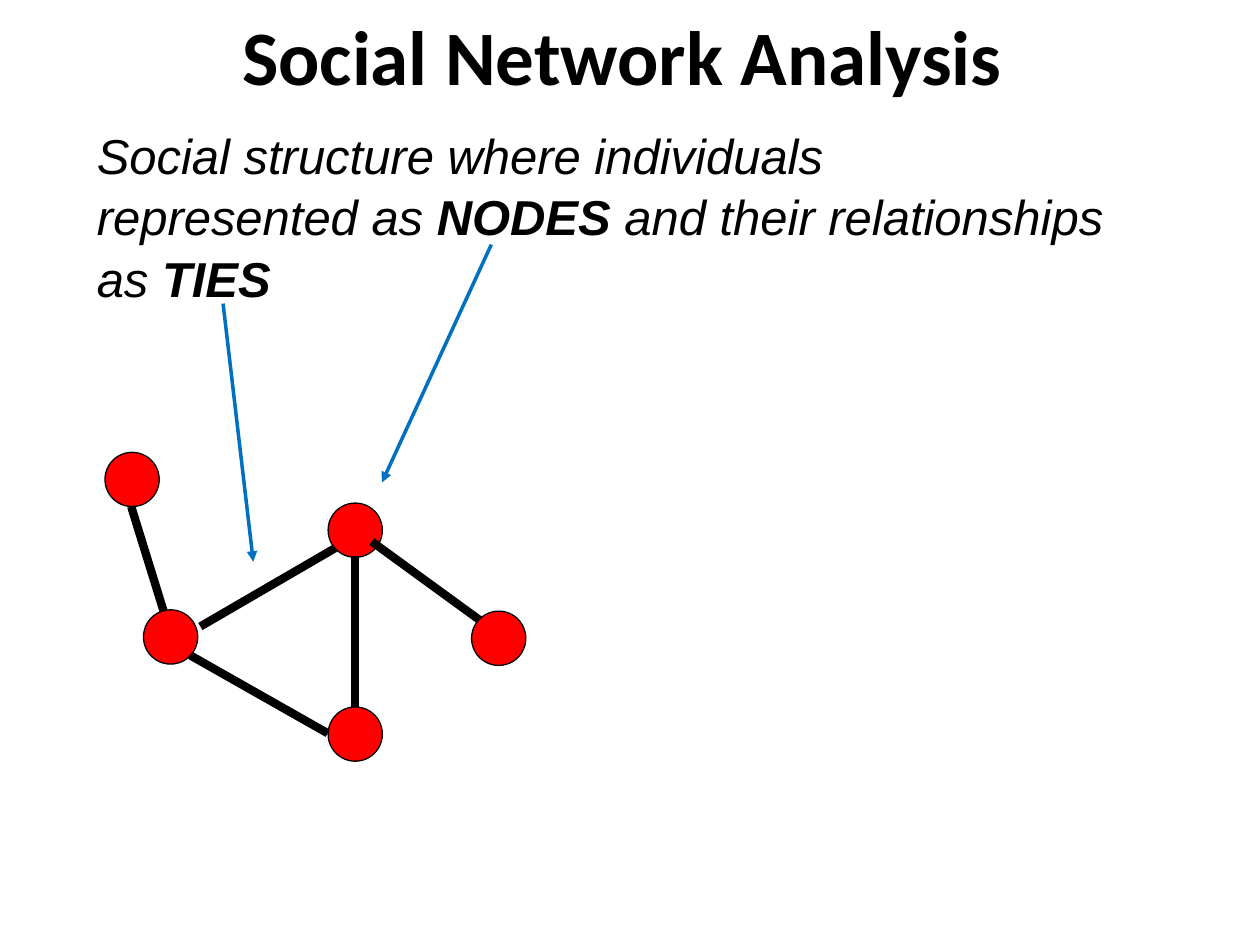
from lxml import etree
from pptx import Presentation
from pptx.dml.color import RGBColor
from pptx.enum.shapes import MSO_CONNECTOR, MSO_SHAPE
from pptx.enum.text import MSO_ANCHOR, PP_ALIGN
from pptx.oxml.ns import qn
from pptx.util import Pt

STRAIGHT = MSO_CONNECTOR.STRAIGHT
OVAL = MSO_SHAPE.OVAL
MIDDLE = MSO_ANCHOR.MIDDLE
CENTER = PP_ALIGN.CENTER

BLACK, RED, BLUE = "000000", "FF0000", "0070C0"
NODE_SIZE = 31
BACK_NODES = [(22, 90), (127.5, 29), (127.5, 145.5), (0, 0)]
FRONT_NODES = [(209.5, 90.75)]
TIES = [
    ((54.5, 99.5), (131.5, 54.75)),
    ((48.75, 116), (127.25, 160.5)),
    ((143, 145.5), (143, 59)),
    ((215, 96.5), (152.5, 51)),
    ((33.5, 90.75), (15, 31)),
]
POINTERS = [((280.75, 139.75), (218.25, 275.75)), ((127.5, 173.5), (144.75, 321))]


def color(hex_value):
    return RGBColor.from_string(hex_value)


def add_line(slide, start, end, hex_value, width, arrow=False):
    line = slide.shapes.add_connector(STRAIGHT, *map(Pt, start + end))
    line.line.color.rgb = color(hex_value)
    line.line.width = Pt(width)
    properties = line.line._get_or_add_ln()
    if arrow:
        etree.SubElement(properties, qn("a:tailEnd"), type="triangle")
    etree.SubElement(properties.getparent(), qn("a:effectLst"))


def add_title(slide, left, top, width, height):
    title = slide.shapes.title
    title.left, title.top, title.width, title.height = map(Pt, (left, top, width, height))
    title.text_frame.text = "Social Network Analysis "
    title.text_frame.vertical_anchor = MIDDLE
    heading = title.text_frame.paragraphs[0]
    heading.alignment = CENTER
    heading.font.name = "Calibri"
    heading.font.size = Pt(44)
    heading.font.bold = True
    heading.font.color.rgb = color(BLACK)


def add_definition(slide, left, top, width, height):
    box = slide.shapes.add_textbox(*map(Pt, (left, top, width, height)))
    box.text_frame.word_wrap = True
    definition = box.text_frame.paragraphs[0]
    definition.line_spacing = 1.05
    definition.font.name = "Arial"
    definition.font.size = Pt(28)
    definition.font.italic = True
    definition.font.color.rgb = color(BLACK)
    definition.add_run().text = "Social structure where individuals"
    definition.add_line_break()
    for words, bold in [
        ("represented as ", False),
        ("NODES ", True),
        ("and their relationships as ", False),
        ("TIES", True),
    ]:
        run = definition.add_run()
        run.text = words
        run.font.bold = bold


def add_nodes(slide, left, top, positions):
    for x, y in positions:
        node = slide.shapes.add_shape(
            OVAL, Pt(left + x), Pt(top + y), Pt(NODE_SIZE), Pt(NODE_SIZE))
        node.shadow.inherit = False
        node.fill.solid()
        node.fill.fore_color.rgb = color(RED)
        node.line.color.rgb = color(BLACK)
        node.line.width = Pt(0.75)


def add_network(slide, left, top):
    add_nodes(slide, left, top, BACK_NODES)
    for (x1, y1), (x2, y2) in TIES:
        add_line(slide, (left + x1, top + y1), (left + x2, top + y2), BLACK, 4.75)
    add_nodes(slide, left, top, FRONT_NODES)


def main():
    deck = Presentation()
    deck.slide_width, deck.slide_height = Pt(720), Pt(540)
    slide = deck.slides.add_slide(deck.slide_layouts[5])
    add_title(slide, 36.75, -13.75, 648, 90)
    add_definition(slide, 48.25, 66.25, 592.5, 206)
    add_network(slide, 60, 258.5)
    for start, end in POINTERS:
        add_line(slide, start, end, BLUE, 2, arrow=True)
    deck.save("out.pptx")


if __name__ == "__main__":
    main()
